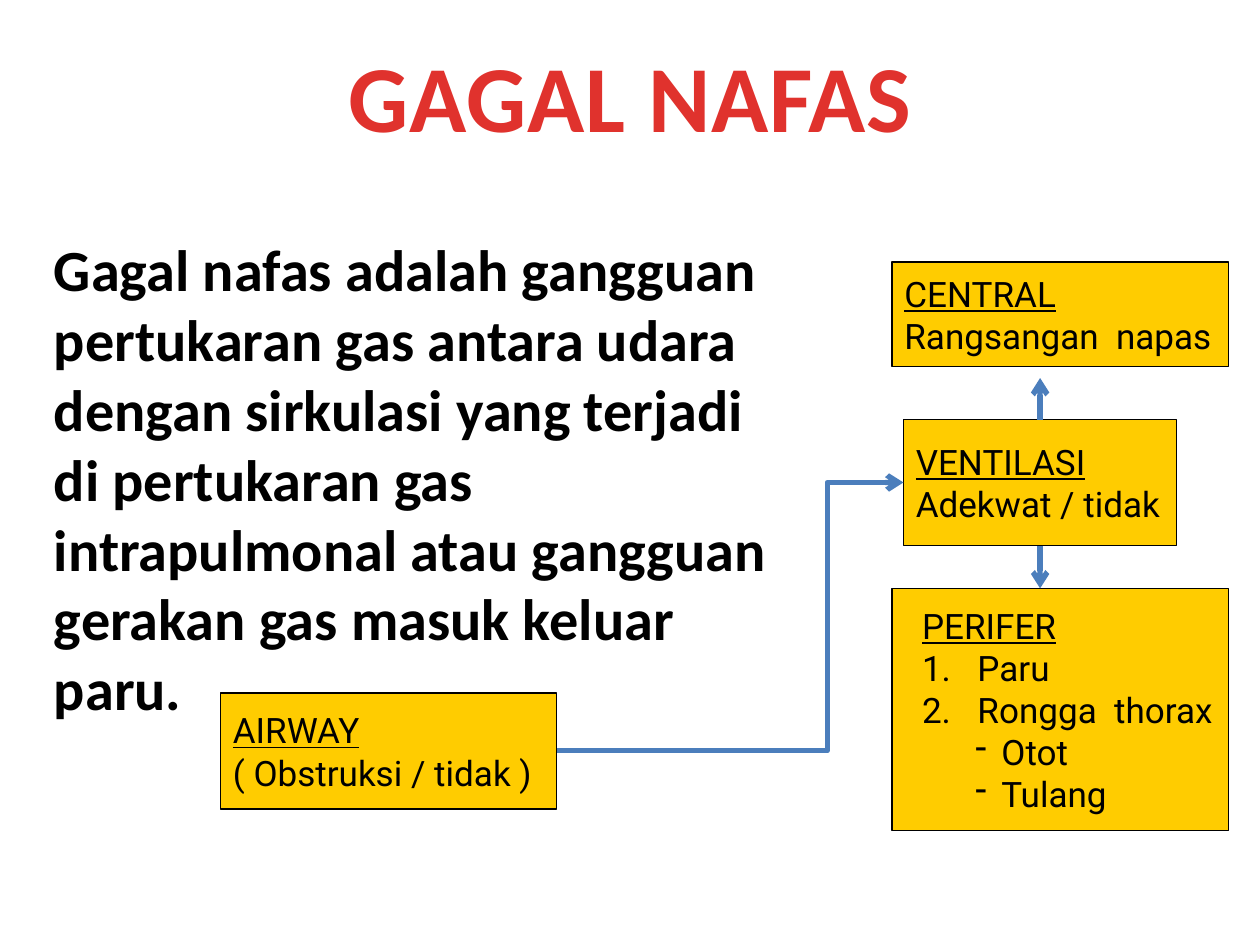
from pptx import Presentation
from pptx.dml.color import RGBColor
from pptx.enum.shapes import MSO_CONNECTOR as CONN, MSO_SHAPE as SHAPE
from pptx.enum.text import MSO_ANCHOR as ANCHOR, PP_ALIGN as ALIGN
from pptx.oxml.ns import qn
from pptx.util import Inches, Pt
from lxml.etree import SubElement

BLACK = RGBColor(0x00, 0x00, 0x00)
RED = RGBColor(0xE0, 0x32, 0x2D)
YELLOW = RGBColor(0xFF, 0xCC, 0x00)
BLUE = RGBColor(0x4B, 0x7E, 0xBC)
TOP, LEFT, BOTTOM, RIGHT = range(4)


def write(p, text, font="Roboto", size=20, color=BLACK, bold=False,
          underline=False, align=ALIGN.LEFT, spacing=None):
    """Fill a paragraph with one formatted run; spacing is in points."""
    p.alignment = align
    r = p.add_run()
    r.text = text
    r.font.name = font
    r.font.size = Pt(size)
    r.font.color.rgb = color
    r.font.bold = bold
    r.font.underline = underline
    if spacing:
        r.font._element.set("spc", str(int(spacing * 100)))


def indent(p, left, hanging=0, bullet=None, **attrs):
    """Indent a paragraph and, if asked, give it a bullet element."""
    pPr = p._p.get_or_add_pPr()
    pPr.set("marL", str(Inches(left)))
    pPr.set("indent", str(-Inches(hanging)))
    if bullet:
        SubElement(pPr, qn(bullet), **attrs)


def add_text(slide, box, text, **fmt):
    tf = slide.shapes.add_textbox(*map(Inches, box)).text_frame
    tf.word_wrap = True
    write(tf.paragraphs[0], text, **fmt)


def add_box(slide, box, heading, *lines):
    sp = slide.shapes.add_shape(SHAPE.RECTANGLE, *map(Inches, box))
    sp.shadow.inherit = False
    sp.fill.solid()
    sp.fill.fore_color.rgb = YELLOW
    sp.line.color.rgb = BLACK
    sp.line.width = Pt(0.75)
    tf = sp.text_frame
    tf.word_wrap = True
    tf.vertical_anchor = ANCHOR.MIDDLE
    write(tf.paragraphs[0], heading, underline=True)
    for line in lines:
        write(tf.add_paragraph(), line)
    return sp


def add_periphery(slide, box):
    sp = add_box(slide, box, "PERIFER", "Paru", "Rongga  thorax", "Otot", "Tulang")
    heading, *rest = sp.text_frame.paragraphs
    indent(heading, 0.14)
    for p in rest[:2]:
        indent(p, 0.58, 0.44, "a:buAutoNum", type="arabicPeriod")
    for p in rest[2:]:
        indent(p, 0.77, 0.21, "a:buChar", char="-")


def add_arrow(slide, kind, start, side, end):
    """Draw an arrow from one side of a shape to the point end."""
    c = slide.shapes.add_connector(kind, 0, 0, *end)
    c.begin_connect(start, side)
    c.line.color.rgb = BLUE
    c.line.width = Pt(3)
    SubElement(c.line._get_or_add_ln(), qn("a:tailEnd"), type="arrow")
    SubElement(c._element.spPr, qn("a:effectLst"))
    return c


def add_flow(slide):
    airway = add_box(slide, (1.75, 5.5, 2.67, 0.92), "AIRWAY", "( Obstruksi / tidak )")
    ventilation = add_box(slide, (7.17, 3.33, 2.17, 1), "VENTILASI", "Adekwat / tidak")
    add_box(slide, (7.08, 2.08, 2.67, 0.83), "CENTRAL", "Rangsangan  napas")
    add_periphery(slide, (7.08, 4.67, 2.67, 1.92))

    center = ventilation.left + ventilation.width // 2
    middle = ventilation.top + ventilation.height // 2
    add_arrow(slide, CONN.STRAIGHT, ventilation, TOP, (center, Inches(3)))
    add_arrow(slide, CONN.STRAIGHT, ventilation, BOTTOM, (center, Inches(4.67)))
    bent = add_arrow(slide, CONN.ELBOW, airway, RIGHT, (ventilation.left, middle))
    bent.end_connect(ventilation, LEFT)
    guides = bent._element.spPr.prstGeom.get_or_add_avLst()
    SubElement(guides, qn("a:gd"), name="adj1", fmla="val 78000")


def main():
    prs = Presentation()
    prs.slide_width, prs.slide_height = Inches(10), Inches(7.5)
    slide = prs.slides.add_slide(prs.slide_layouts[6])
    add_text(slide, (0.33, 1.8, 5.92, 3.54),
             "Gagal nafas adalah gangguan pertukaran gas antara udara dengan "
             "sirkulasi yang terjadi di pertukaran gas intrapulmonal atau "
             "gangguan gerakan gas masuk keluar paru.",
             font="Calibri", size=33.3, bold=True)
    add_text(slide, (0, 0.25, 10, 1.01), "GAGAL NAFAS", font="Calibri", size=54,
             color=RED, bold=True, align=ALIGN.CENTER, spacing=0.5)
    add_flow(slide)
    prs.save("out.pptx")


if __name__ == "__main__":
    main()
